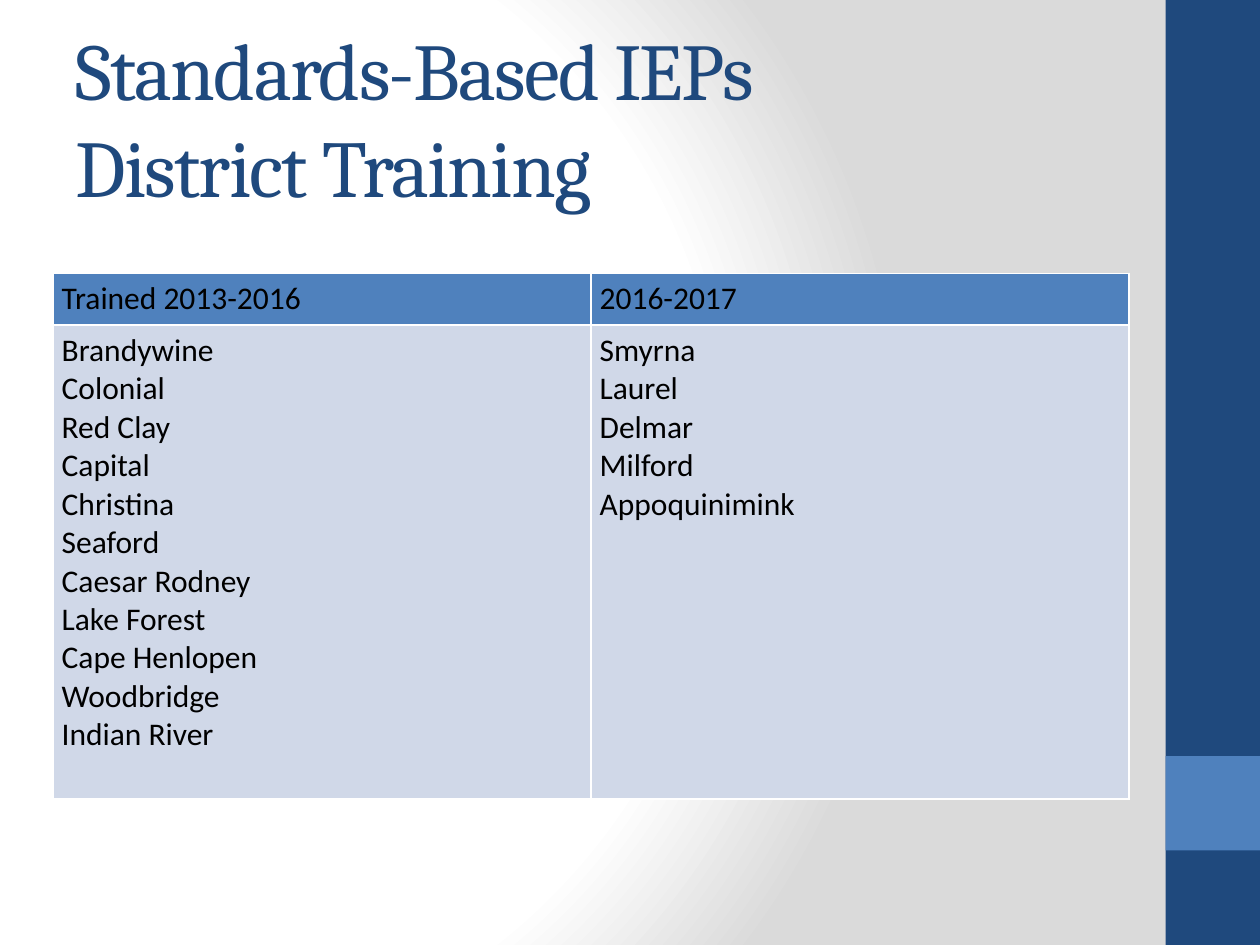
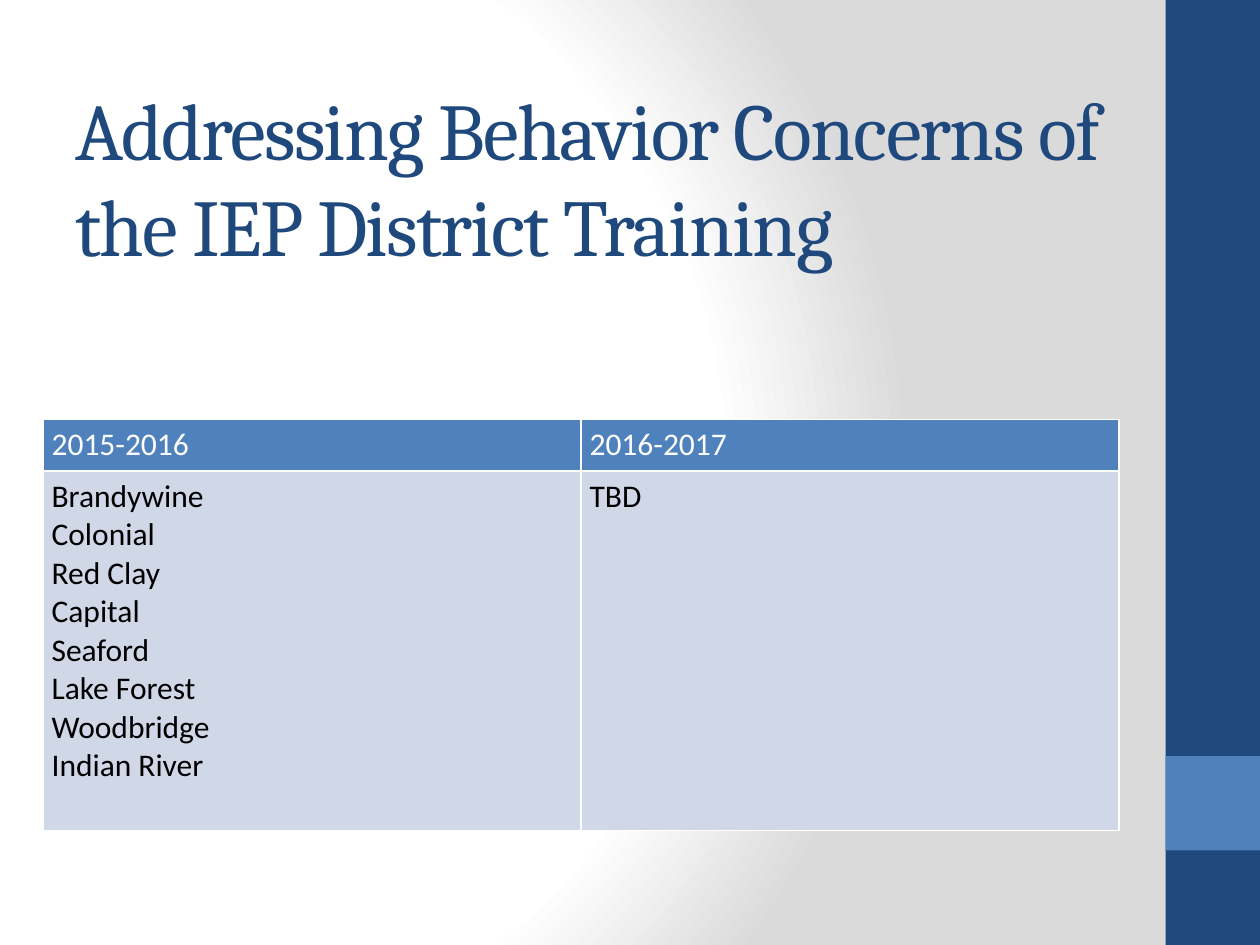
import pptx
import pptx.util
import pptx.dml.color
import pptx.enum.shapes
import pptx.enum.text
import pptx.oxml
import pptx.oxml.ns

PX = 9144  # EMU in one px, 100 px to the inch
WIDTH, HEIGHT = 1000, 750
NAVY, BLUE, PALE = "1F497D", "4F81BD", "D0D8E8"
WHITE, BLACK, GREY = "FFFFFF", "000000", "DADADA"
BANDS = [(0, HEIGHT, NAVY), (600, 75, BLUE)]  # top, height, colour
BAND_LEFT, BAND_WIDTH = 925, 75
COLUMN_WIDTH, HEADER_HEIGHT = 427, 41
CELL_MARGINS = dict(margin_left=7 * PX, margin_right=7 * PX,
                    margin_top=5 * PX, margin_bottom=5 * PX)
TITLE_FONT = dict(name="Cambria", size=pptx.util.Pt(46), bold=False)
CELL_FONT = dict(name="Calibri", size=pptx.util.Pt(18), bold=False)


def rgb(hex_color):
    return pptx.dml.color.RGBColor.from_string(hex_color)


def set_attributes(target, values):
    for name, value in values.items():
        setattr(target, name, value)


def set_font(font, values, color):
    set_attributes(font, values)
    font.color.rgb = rgb(color)


def set_background(master):
    """Give every slide a white glow that fades to grey on the right."""
    master.background.fill.gradient()
    old = master.element.xpath(".//p:bgPr/a:gradFill")[0]
    stops = "".join(
        f'<a:gs pos="{pos * 1000}"><a:srgbClr val="{color}"/></a:gs>'
        for pos, color in [(0, WHITE), (75, WHITE), (100, GREY)])
    new = pptx.oxml.parse_xml(
        f'<a:gradFill {pptx.oxml.ns.nsdecls("a")} rotWithShape="1">'
        f'<a:gsLst>{stops}</a:gsLst><a:path path="circle">'
        '<a:fillToRect l="20000" t="50000" r="100000" b="50000"/>'
        '</a:path></a:gradFill>')
    old.getparent().replace(old, new)


def add_bands(s):
    for top, height, color in BANDS:
        sp = s.shapes.add_shape(
            pptx.enum.shapes.MSO_SHAPE.RECTANGLE,
            BAND_LEFT * PX, top * PX, BAND_WIDTH * PX, height * PX)
        sp.shadow.inherit = False
        sp.fill.solid()
        sp.fill.fore_color.rgb = rgb(color)
        sp.line.fill.background()


def set_title(s, text, height):
    sp = s.shapes.title
    set_attributes(sp, dict(left=50 * PX, top=30 * PX,
                            width=833 * PX, height=height * PX))
    tf = sp.text_frame
    tf.text = text
    set_attributes(tf, dict(
        word_wrap=True, auto_size=pptx.enum.text.MSO_AUTO_SIZE.NONE,
        vertical_anchor=pptx.enum.text.MSO_ANCHOR.MIDDLE))
    p = tf.paragraphs[0]
    p.alignment = pptx.enum.text.PP_ALIGN.LEFT
    for r in p.runs:
        set_font(r.font, TITLE_FONT, NAVY)
        r.font._element.set("spc", "-100")


def add_borders(cell):
    tc_pr = cell._tc.get_or_add_tcPr()
    for index, side in enumerate(("lnL", "lnR", "lnT", "lnB")):
        tc_pr.insert(index, pptx.oxml.parse_xml(
            f'<a:{side} {pptx.oxml.ns.nsdecls("a")} w="12700"><a:solidFill>'
            f'<a:srgbClr val="{WHITE}"/></a:solidFill></a:{side}>'))


def fill_cell(cell, lines, fill, color):
    set_attributes(cell, CELL_MARGINS)
    cell.fill.solid()
    cell.fill.fore_color.rgb = rgb(fill)
    add_borders(cell)
    cell.text = "\n".join(lines)
    for p in cell.text_frame.paragraphs:
        for r in p.runs:
            set_font(r.font, CELL_FONT, color)


def add_district_table(s, left, top, body_height, header_color, districts):
    """Draw one column for each period in districts (period: names)."""
    table = s.shapes.add_table(
        2, len(districts), left * PX, top * PX,
        COLUMN_WIDTH * len(districts) * PX,
        (HEADER_HEIGHT + body_height) * PX).table
    table.horz_banding = False
    for row, height in zip(table.rows, (HEADER_HEIGHT, body_height)):
        row.height = height * PX
    for col, (period, names) in enumerate(districts.items()):
        table.columns[col].width = COLUMN_WIDTH * PX
        fill_cell(table.cell(0, col), [period], BLUE, header_color)
        fill_cell(table.cell(1, col), names, PALE, BLACK)


def add_training_slide(prs, title, title_height, **table):
    s = prs.slides.add_slide(prs.slide_layouts[5])
    add_bands(s)
    set_title(s, title, title_height)
    add_district_table(s, **table)


def main():
    prs = pptx.Presentation()
    prs.slide_width, prs.slide_height = WIDTH * PX, HEIGHT * PX
    set_background(prs.slide_master)

    add_training_slide(
        prs, "Standards-Based IEPs\vDistrict Training", 125,
        left=42, top=217, body_height=376, header_color=BLACK,
        districts={
            "Trained 2013-2016": [
                "Brandywine", "Colonial", "Red Clay", "Capital", "Christina",
                "Seaford", "Caesar Rodney", "Lake Forest", "Cape Henlopen",
                "Woodbridge", "Indian River"],
            "2016-2017": ["Smyrna", "Laurel", "Delmar", "Milford",
                          "Appoquinimink"]})

    add_training_slide(
        prs, "Addressing Behavior Concerns of the IEP District Training", 220,
        left=34, top=333, body_height=285, header_color=WHITE,
        districts={
            "2015-2016": [
                "Brandywine", "Colonial", "Red Clay", "Capital", "Seaford",
                "Lake Forest", "Woodbridge", "Indian River"],
            "2016-2017": ["TBD"]})

    prs.save("out.pptx")


if __name__ == "__main__":
    main()
